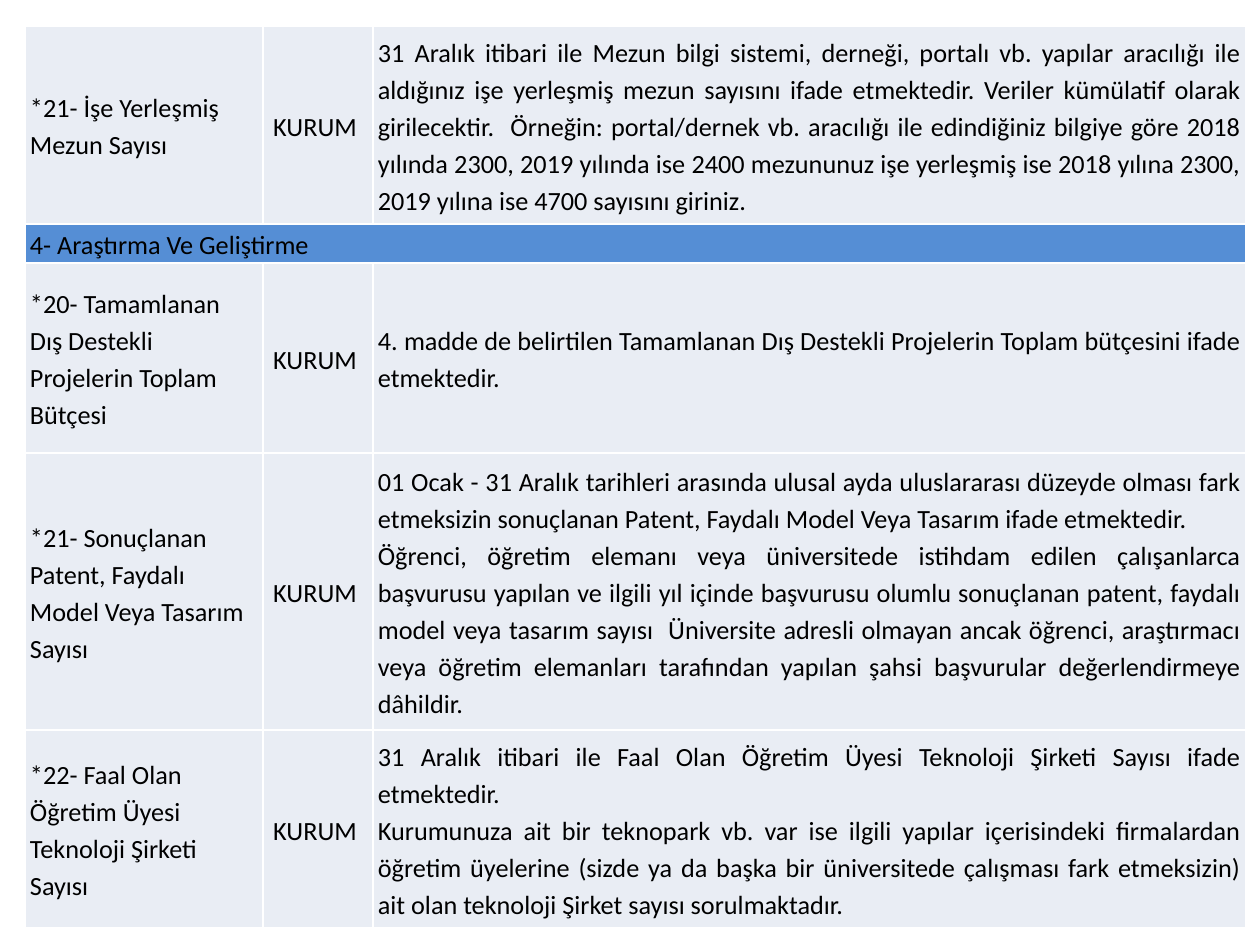
from lxml.etree import SubElement
from pptx import Presentation
from pptx.dml.color import RGBColor
from pptx.enum.text import MSO_ANCHOR as Anchor, PP_ALIGN as Align
from pptx.oxml.ns import qn
from pptx.util import Emu, Pt

COLORS = {"text": "000000", "row": "E9EDF4", "section": "558ED5", "border": "FFFFFF"}
SCALE = 914400 / 126


def px(length):
    return Emu(round(length * SCALE))


def format_cell(cell, paragraphs, align, fill):
    cell.margin_left = cell.margin_right = px(5)
    cell.margin_top = cell.margin_bottom = 0
    cell.vertical_anchor = Anchor.MIDDLE
    properties = cell._tc.get_or_add_tcPr()
    for side in ("lnL", "lnR", "lnT", "lnB"):
        border = SubElement(properties, qn(f"a:{side}"), w=str(Pt(1)))
        border_fill = SubElement(border, qn("a:solidFill"))
        SubElement(border_fill, qn("a:srgbClr"), val=COLORS["border"])
    cell.fill.solid()
    cell.fill.fore_color.rgb = RGBColor.from_string(COLORS[fill])
    cell.text_frame.text = "\n".join(paragraphs)
    for paragraph in cell.text_frame.paragraphs:
        paragraph.alignment = align
        paragraph.line_spacing = 1.15
        for run in paragraph.runs:
            run.font.name = "Calibri"
            run.font.size = Pt(15)
            run.font.color.rgb = RGBColor.from_string(COLORS["text"])


SECTION = "4- Araştırma Ve Geliştirme"
SOURCE = "KURUM "
COLUMN_WIDTHS = [238, 110, 873]
COLUMN_ALIGNS = [Align.LEFT, Align.CENTER, Align.JUSTIFY]

indicators = [
    (198, "*21- İşe Yerleşmiş Mezun Sayısı", [
        "31 Aralık itibari ile Mezun bilgi sistemi, derneği, portalı vb. yapılar aracılığı ile "
        "aldığınız işe yerleşmiş mezun sayısını ifade etmektedir. Veriler kümülatif olarak "
        "girilecektir.  Örneğin: portal/dernek vb. aracılığı ile edindiğiniz bilgiye göre 2018 "
        "yılında 2300, 2019 yılında ise 2400 mezununuz işe yerleşmiş ise 2018 yılına 2300, "
        "2019 yılına ise 4700 sayısını giriniz. ",
    ]),
    (39, SECTION, []),
    (190, "*20- Tamamlanan Dış Destekli Projelerin Toplam Bütçesi", [
        "4. madde de belirtilen Tamamlanan Dış Destekli Projelerin Toplam bütçesini ifade "
        "etmektedir. ",
    ]),
    (277, "*21- Sonuçlanan Patent, Faydalı Model Veya Tasarım Sayısı", [
        "01 Ocak - 31 Aralık tarihleri arasında ulusal ayda uluslararası düzeyde olması fark "
        "etmeksizin sonuçlanan Patent, Faydalı Model Veya Tasarım ifade etmektedir. ",
        "Öğrenci, öğretim elemanı veya üniversitede istihdam edilen çalışanlarca başvurusu "
        "yapılan ve ilgili yıl içinde başvurusu olumlu sonuçlanan patent, faydalı model veya "
        "tasarım sayısı  Üniversite adresli olmayan ancak öğrenci, araştırmacı veya öğretim "
        "elemanları tarafından yapılan şahsi başvurular değerlendirmeye dâhildir. ",
    ]),
    (198, "*22- Faal Olan Öğretim Üyesi Teknoloji Şirketi Sayısı", [
        "31 Aralık itibari ile Faal Olan Öğretim Üyesi Teknoloji Şirketi Sayısı ifade "
        "etmektedir. ",
        "Kurumunuza ait bir teknopark vb. var ise ilgili yapılar içerisindeki firmalardan "
        "öğretim üyelerine (sizde ya da başka bir üniversitede çalışması fark etmeksizin) ait "
        "olan teknoloji Şirket sayısı sorulmaktadır. ",
    ]),
]

deck = Presentation()
deck.slide_width, deck.slide_height = px(1260), px(945)
slide = deck.slides.add_slide(deck.slide_layouts[6])

total_height = sum(height for height, _, _ in indicators)
indicator_table = slide.shapes.add_table(
    len(indicators), len(COLUMN_WIDTHS),
    px(25), px(26), px(sum(COLUMN_WIDTHS)), px(total_height),
).table
indicator_table.first_row = False
indicator_table.horz_banding = False
for column, width in zip(indicator_table.columns, COLUMN_WIDTHS):
    column.width = px(width)

for row, (height, name, definition) in zip(indicator_table.rows, indicators):
    row.height = px(height)
    is_section = name == SECTION
    if is_section:
        row.cells[0].merge(row.cells[2])
    contents = [[name], [] if is_section else [SOURCE], definition]
    fill = "section" if is_section else "row"
    for cell, paragraphs, align in zip(row.cells, contents, COLUMN_ALIGNS):
        format_cell(cell, paragraphs, align, fill)

deck.save("out.pptx")
